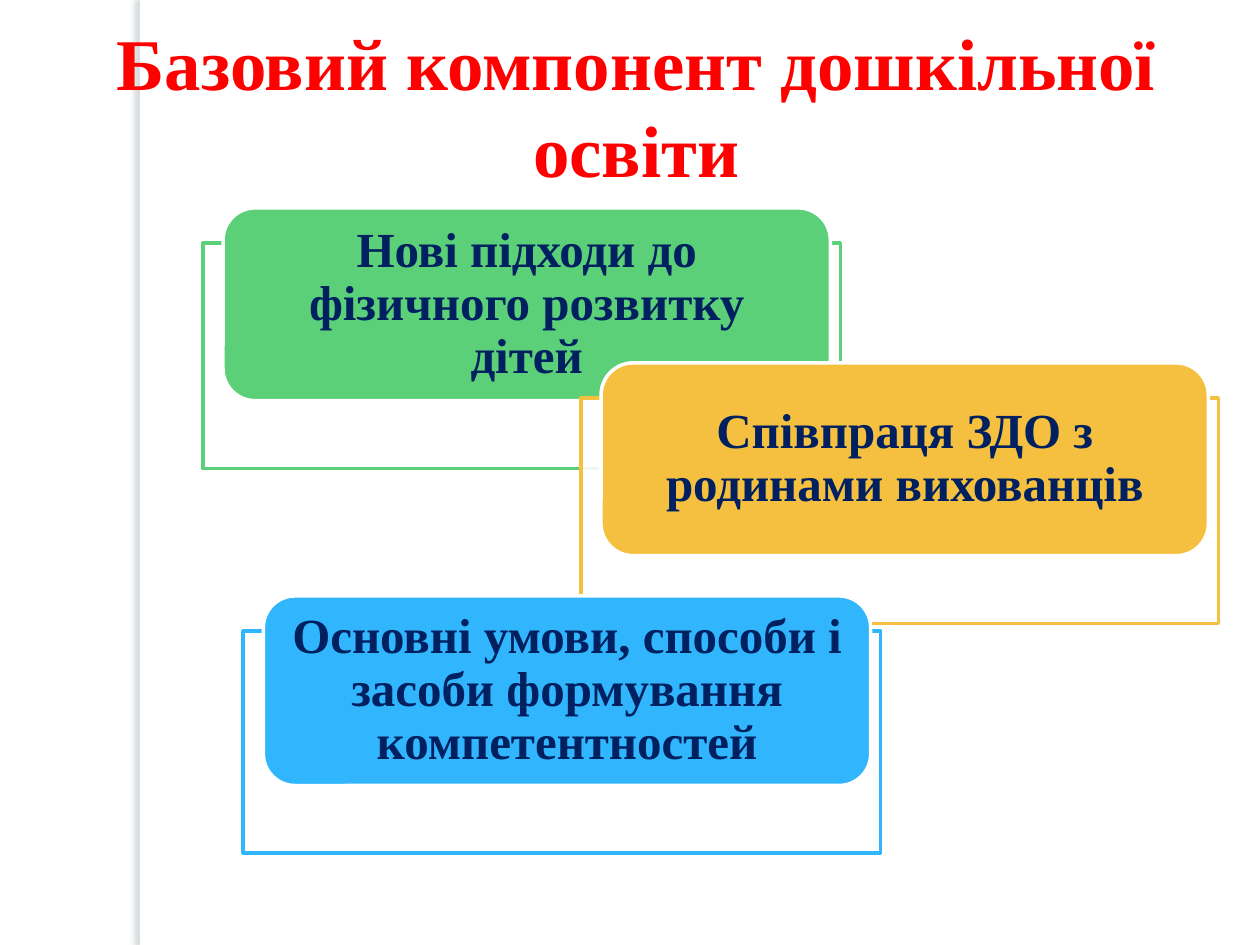
from lxml.etree import SubElement
from pptx import Presentation
from pptx.dml.color import RGBColor
from pptx.enum.shapes import MSO_SHAPE
from pptx.enum.text import MSO_ANCHOR, MSO_AUTO_SIZE, PP_ALIGN
from pptx.oxml.ns import qn
from pptx.util import Inches, Pt

WHITE = RGBColor(0xFF, 0xFF, 0xFF)
RED = RGBColor(0xFF, 0x00, 0x00)
NAVY = RGBColor(0x00, 0x20, 0x60)
GREEN = RGBColor(0x5B, 0xD0, 0x78)
YELLOW = RGBColor(0xF5, 0xC0, 0x40)
BLUE = RGBColor(0x31, 0xB6, 0xFD)
SHADOW = RGBColor(0x61, 0x73, 0x7F)

FONT = "Times New Roman"
SLIDE_W, SLIDE_H = 10, 7.5
FRAME_W, CARD_W = 5.06, 4.82
CARD_DX, CARD_DY = 0.16, -0.28
CARD_SHARE = 0.855

TOPICS = [
    (1.61, 1.93, 1.79, GREEN, "Нові підходи до фізичного розвитку дітей"),
    (4.61, 3.16, 1.79, YELLOW, "Співпраця ЗДО з родинами вихованців"),
    (1.93, 5.01, 1.76, BLUE,
     "Основні умови, способи і засоби формування компетентностей"),
]


def add_box(slide, kind, x, y, w, h, fill, line=None):
    sp = slide.shapes.add_shape(kind, Inches(x), Inches(y), Inches(w), Inches(h))
    sp.shadow.inherit = False
    sp.fill.solid()
    sp.fill.fore_color.rgb = fill
    if line is None:
        sp.line.fill.background()
    else:
        sp.line.color.rgb = line
        sp.line.width = Pt(2)
    return sp


def set_alpha(color, percent):
    SubElement(color, qn("a:alpha"), val=str(percent * 1000))


def write_text(sp, text, size, color):
    tf = sp.text_frame
    tf.word_wrap = True
    tf.auto_size = MSO_AUTO_SIZE.NONE
    tf.vertical_anchor = MSO_ANCHOR.MIDDLE
    p = tf.paragraphs[0]
    p.alignment = PP_ALIGN.CENTER
    r = p.add_run()
    r.text = text
    r.font.name = FONT
    r.font.size = Pt(size)
    r.font.bold = True
    r.font.color.rgb = color
    return tf


def add_side_strip(slide):
    sp = add_box(slide, MSO_SHAPE.RECTANGLE, 1.11, 0, 0.08, SLIDE_H, WHITE)
    effects = sp._element.spPr.find(qn("a:effectLst"))
    shadow = SubElement(effects, qn("a:outerShdw"), blurRad=str(Pt(3)),
                        dist=str(Pt(3)), dir=str(180 * 60000),
                        algn="r", rotWithShape="0")
    color = SubElement(shadow, qn("a:srgbClr"), val=str(SHADOW))
    set_alpha(color, 25)


def add_topic(slide, x, y, h, color, text):
    frame = add_box(slide, MSO_SHAPE.RECTANGLE, x, y, FRAME_W, h, WHITE, color)
    set_alpha(frame._element.spPr.find(qn("a:solidFill"))[0], 90)
    card = add_box(slide, MSO_SHAPE.ROUNDED_RECTANGLE, x + CARD_DX, y + CARD_DY,
                   CARD_W, h * CARD_SHARE, color, WHITE)
    tf = write_text(card, text, 28, NAVY)
    tf.margin_left = tf.margin_right = Inches(0.13)
    tf.margin_top = tf.margin_bottom = 0
    tf.paragraphs[0].line_spacing = 0.9


def add_title(slide, text):
    sp = slide.shapes.title
    sp.left, sp.top = Inches(0.55), Inches(0.21)
    sp.width, sp.height = Inches(9), Inches(1.25)
    write_text(sp, text, 41.6, RED)


def main():
    prs = Presentation()
    prs.slide_width, prs.slide_height = Inches(SLIDE_W), Inches(SLIDE_H)
    slide = prs.slides.add_slide(prs.slide_layouts[5])
    add_side_strip(slide)
    for topic in TOPICS:
        add_topic(slide, *topic)
    add_title(slide, "Базовий компонент дошкільної освіти")
    title = slide.shapes.title._element
    title.getparent().append(title)
    prs.save("out.pptx")


if __name__ == "__main__":
    main()
